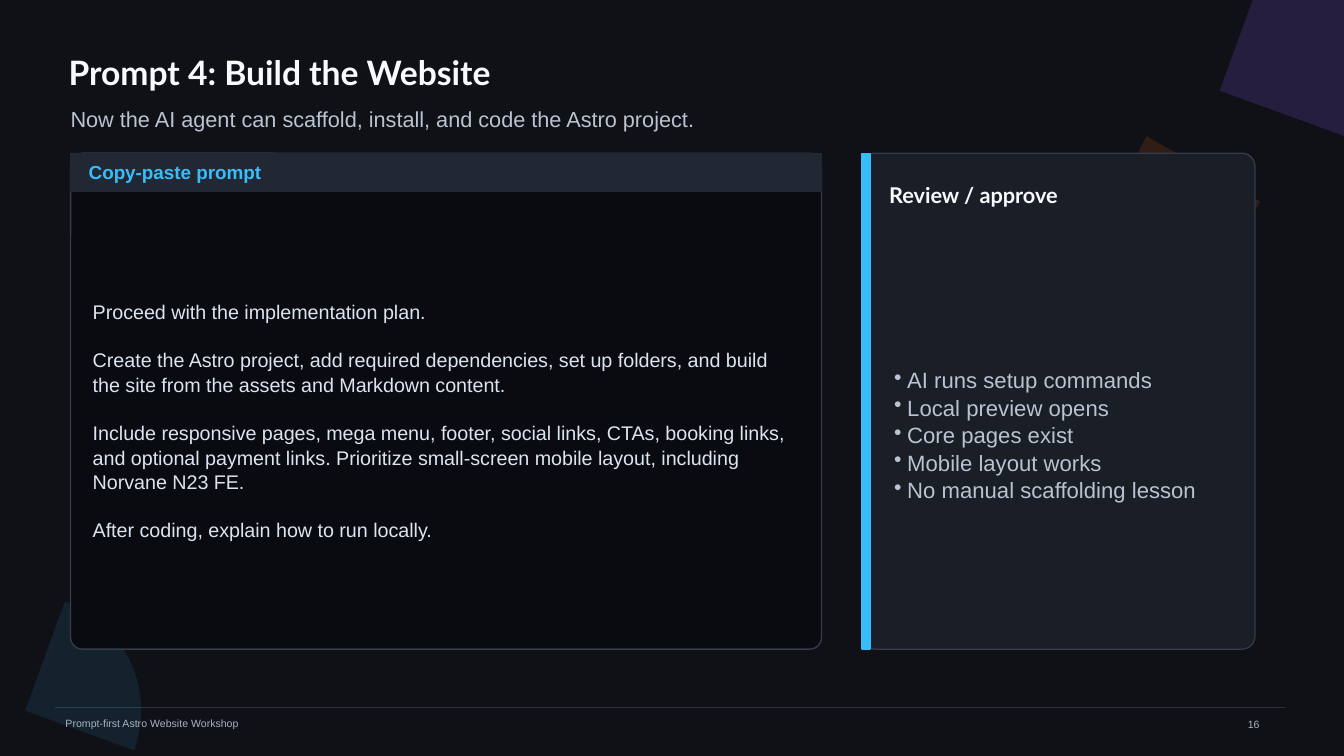
from dataclasses import dataclass
from typing import Optional

from lxml import etree
from pptx import Presentation, util as u
from pptx.dml import color
from pptx.enum import shapes, text
from pptx.oxml import ns

COLORS = {
    "background": "0F1117", "rule": "2B303B", "footer": "AAB3C1",
    "violet": "8B5CF6", "orange": "F97316", "sky": "38BDF8",
    "white": "F8FAFC", "muted": "BAC3D2", "prompt": "DCE4F0",
    "console": "090B10", "header": "222734", "card": "1A1E27",
    "border": "343B4A",
}
SLIDE_COLUMNS, SLIDE_ROWS = 133.33, 75
CELL = u.Inches(0.1)
PANEL_TOP, PANEL_ROWS = 15.2, 49.2
PROMPT_LEFT, REVIEW_LEFT = 7, 85.5


@dataclass
class Area:
    column: float
    row: float
    columns: float
    rows: float

    def emu(self) -> list[int]:
        return [round(n * CELL) for n in (self.column, self.row, self.columns, self.rows)]


@dataclass
class Wedge:
    area: Area
    rotation: int
    fill: str
    opacity: int


@dataclass
class Panel:
    area: Area
    fill: str
    border: str
    weight: float = 1
    rounding: Optional[float] = None


@dataclass
class Label:
    area: Area
    paragraphs: list[str]
    size: float
    ink: str
    font: str = "Arial"
    bold: bool = False
    bullet: bool = False
    gap: float = 0
    spacing: Optional[float] = None


WEDGES = [
    Wedge(Area(102, -10, 38, 38), 20, "violet", 18),
    Wedge(Area(112, 7, 26, 26), 210, "orange", 14),
    Wedge(Area(-9, 59, 23, 23), 20, "sky", 10),
]
PANELS = [
    Panel(Area(PROMPT_LEFT, PANEL_TOP, 74.5, PANEL_ROWS), "console", "border", 1, 0.024),
    Panel(Area(PROMPT_LEFT, PANEL_TOP, 74.5, 3.8), "header", "header"),
    Panel(Area(REVIEW_LEFT, PANEL_TOP, 39, PANEL_ROWS), "card", "border", 0.9, 0.033),
    Panel(Area(REVIEW_LEFT, PANEL_TOP, 0.8, PANEL_ROWS), "sky", "sky"),
]
TITLE = Label(Area(6.8, 4.5, 106, 5.2), ["Prompt 4: Build the Website"], 24, "white", "Lato", True)
LABELS = [
    Label(Area(6.5, 70.8, 55, 2), ["Prompt-first Astro Website Workshop"], 7.5, "footer"),
    Label(Area(7, 10.4, 106, 2.7),
          ["Now the AI agent can scaffold, install, and code the Astro project."], 15.5, "muted"),
    Label(Area(8.8, 16.4, 70.9, 1.3), ["Copy-paste prompt"], 13.5, "sky", bold=True),
    Label(Area(9.2, 20.7, 70.1, 42), [
        "Proceed with the implementation plan.",
        "Create the Astro project, add required dependencies, set up folders, "
        "and build the site from the assets and Markdown content.",
        "Include responsive pages, mega menu, footer, social links, CTAs, booking links, "
        "and optional payment links. Prioritize small-screen mobile layout, "
        "including Norvane N23 FE.",
        "After coding, explain how to run locally.",
    ], 14.1, "prompt", gap=16.9, spacing=1.04),
    Label(Area(88.2, 17.9, 34.2, 2.8), ["Review / approve"], 15.5, "white", "Lato", True),
    Label(Area(88.7, 23.4, 33.5, 39.4), [
        "AI runs setup commands",
        "Local preview opens",
        "Core pages exist",
        "Mobile layout works",
        "No manual scaffolding lesson",
    ], 15.8, "muted", bullet=True, spacing=1.04),
    Label(Area(123.8, 71.2, 6.7, 1.3), ["16"], 7.5, "footer"),
]


def rgb(name: str) -> color.RGBColor:
    return color.RGBColor.from_string(COLORS[name])


def paint(s, fill: str) -> None:
    s.shadow.inherit = False
    s.fill.solid()
    s.fill.fore_color.rgb = rgb(fill)


def draw_wedge(slide, wedge: Wedge) -> None:
    s = slide.shapes.add_shape(shapes.MSO_SHAPE.ARC, *wedge.area.emu())
    s.rotation = wedge.rotation
    paint(s, wedge.fill)
    s.line.fill.background()
    tint = s.fill._xPr.find(ns.qn("a:solidFill"))[0]
    etree.SubElement(tint, ns.qn("a:alpha"), val=str(wedge.opacity * 1000))


def draw_panel(slide, panel: Panel) -> None:
    rounded = panel.rounding is not None
    kind = shapes.MSO_SHAPE.ROUNDED_RECTANGLE if rounded else shapes.MSO_SHAPE.RECTANGLE
    s = slide.shapes.add_shape(kind, *panel.area.emu())
    if rounded:
        s.adjustments[0] = panel.rounding
    paint(s, panel.fill)
    s.line.color.rgb = rgb(panel.border)
    s.line.width = u.Pt(panel.weight)


def add_bullet(p) -> None:
    pPr = p._p.get_or_add_pPr()
    indent = round(1.3 * CELL)
    pPr.set("marL", str(indent))
    pPr.set("indent", str(-indent))
    etree.SubElement(pPr, ns.qn("a:buChar"), char="•")


def write(s, label: Label) -> None:
    s.left, s.top, s.width, s.height = label.area.emu()
    tf = s.text_frame
    tf.word_wrap = True
    tf.auto_size = text.MSO_AUTO_SIZE.NONE
    tf.vertical_anchor = text.MSO_ANCHOR.MIDDLE
    tf.margin_left = tf.margin_top = tf.margin_right = tf.margin_bottom = 0
    for i, words in enumerate(label.paragraphs):
        p = tf.add_paragraph() if i else tf.paragraphs[0]
        p.alignment = text.PP_ALIGN.LEFT
        if label.spacing:
            p.line_spacing = label.spacing
        if i and label.gap:
            p.space_before = u.Pt(label.gap)
        if label.bullet:
            add_bullet(p)
        r = p.add_run()
        r.text = words
        r.font.name = label.font
        r.font.size = u.Pt(label.size)
        r.font.bold = label.bold
        r.font.color.rgb = rgb(label.ink)


def draw_footer_rule(slide) -> None:
    left, top, width, _ = Area(5.5, 70.2, 122, 0).emu()
    s = slide.shapes.add_connector(shapes.MSO_CONNECTOR.STRAIGHT, left, top, left + width, top)
    s.line.color.rgb = rgb("rule")
    s.line.width = u.Pt(0.75)
    etree.SubElement(s._element.spPr, ns.qn("a:effectLst"))


def main() -> None:
    prs = Presentation()
    prs.slide_width = round(SLIDE_COLUMNS * CELL)
    prs.slide_height = round(SLIDE_ROWS * CELL)
    slide = prs.slides.add_slide(prs.slide_layouts[5])
    slide.background.fill.solid()
    slide.background.fill.fore_color.rgb = rgb("background")
    write(slide.shapes.title, TITLE)
    draw_footer_rule(slide)
    for wedge in WEDGES:
        draw_wedge(slide, wedge)
    for panel in PANELS:
        draw_panel(slide, panel)
    for label in LABELS:
        write(slide.shapes.add_textbox(*label.area.emu()), label)
    prs.save("out.pptx")


if __name__ == "__main__":
    main()
